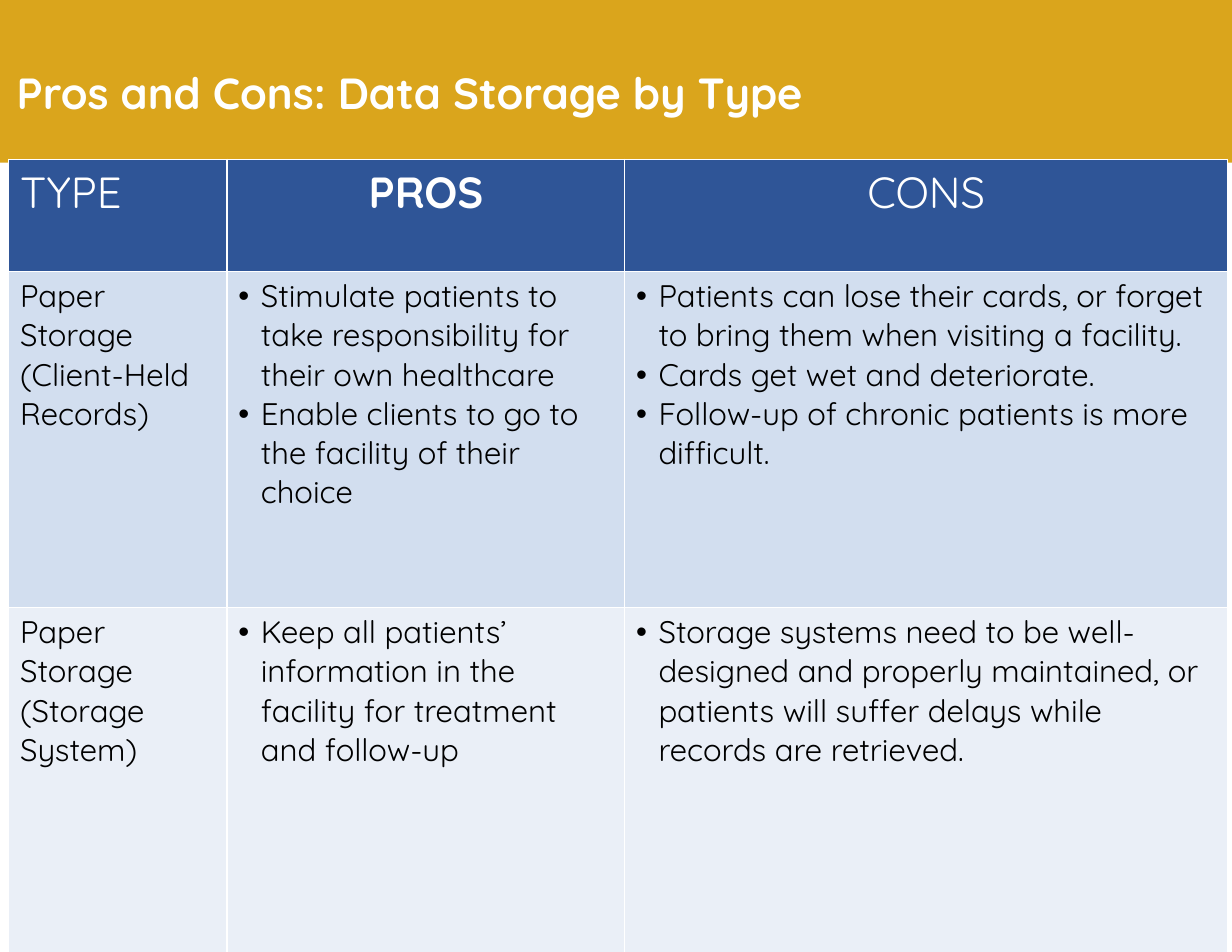
from lxml.etree import SubElement
from pptx import Presentation
from pptx.dml.color import RGBColor
from pptx.enum.shapes import MSO_SHAPE as Shape
from pptx.enum.text import MSO_ANCHOR as Anchor, PP_ALIGN as Align
from pptx.oxml.ns import qn
from pptx.util import Cm, Pt

GOLD = RGBColor(0xDA, 0xA5, 0x1C)
NAVY = RGBColor(0x2F, 0x55, 0x97)
PALE_BLUE = RGBColor(0xD2, 0xDE, 0xEF)
ICE_BLUE = RGBColor(0xEA, 0xEF, 0xF7)
WHITE = RGBColor(0xFF, 0xFF, 0xFF)
BLACK = RGBColor(0x00, 0x00, 0x00)

FONT = "Quicksand"
COLUMN_WIDTHS = (4.95, 9.02, 13.67)
ROW_HEIGHTS = (2.54, 7.62, 8.97)
ROW_FILLS = (NAVY, PALE_BLUE, ICE_BLUE)
HEADINGS = (("TYPE", Align.LEFT, False), ("PROS", Align.CENTER, True), ("CONS", Align.CENTER, False))
STORAGE_TYPES = (
    (
        ("Paper Storage", "(Client-Held Records)"),
        (
            "Stimulate patients to take responsibility for their own healthcare",
            "Enable clients to go to the facility of their choice",
        ),
        (
            "Patients can lose their cards, or forget to bring them when visiting a facility.",
            "Cards get wet and deteriorate.",
            "Follow-up of chronic patients is more difficult.",
        ),
    ),
    (
        ("Paper Storage", "(Storage System)"),
        ("Keep all patients’ information in the facility for treatment and follow-up",),
        (
            "Storage systems need to be well-designed and properly maintained, "
            "or patients will suffer delays while records are retrieved.",
        ),
    ),
)


def set_attributes(target, values):
    """Set each named attribute of the target."""
    for name, value in values.items():
        setattr(target, name, value)


def write_paragraph(paragraph, text, size, color, bold=False):
    """Put one formatted run into a paragraph."""
    run = paragraph.add_run()
    run.text = text
    set_attributes(run.font, {"name": FONT, "size": Pt(size), "bold": bold})
    run.font.color.rgb = color


def add_bullet(paragraph):
    """Give a paragraph a hanging round bullet."""
    properties = paragraph._p.get_or_add_pPr()
    properties.set("marL", str(Cm(0.51)))
    properties.set("indent", str(Cm(-0.51)))
    SubElement(properties, qn("a:buFont"), typeface="Arial")
    SubElement(properties, qn("a:buChar"), char="•")


def format_cell(cell, color):
    """Draw thin white borders around a cell and fill it."""
    properties = cell._tc.get_or_add_tcPr()
    for side in ("a:lnL", "a:lnR", "a:lnT", "a:lnB"):
        line = SubElement(properties, qn(side), w=str(Pt(1)))
        fill = SubElement(line, qn("a:solidFill"))
        SubElement(fill, qn("a:srgbClr"), val=str(WHITE))
    cell.fill.solid()
    cell.fill.fore_color.rgb = color


def add_banner(slide):
    """Add the gold band behind the title."""
    banner = slide.shapes.add_shape(Shape.RECTANGLE, Cm(-0.38), Cm(-0.48), Cm(28.7), Cm(4.17))
    banner.shadow.inherit = False
    banner.fill.solid()
    banner.fill.fore_color.rgb = GOLD
    banner.line.fill.background()


def add_title(slide, text):
    """Add the slide title."""
    title = slide.shapes.add_textbox(Cm(0.13), Cm(1.27), Cm(27.94), Cm(1.8))
    frame = title.text_frame
    set_attributes(frame, {"word_wrap": True, "vertical_anchor": Anchor.MIDDLE})
    paragraph = frame.paragraphs[0]
    paragraph.line_spacing = 0.9
    write_paragraph(paragraph, text, 28, WHITE, True)


def fill_body_cell(cell, lines, bulleted):
    """Write the lines of a body cell, one paragraph each."""
    frame = cell.text_frame
    for index, text in enumerate(lines):
        paragraph = frame.add_paragraph() if index else frame.paragraphs[0]
        write_paragraph(paragraph, text, 20, BLACK)
        if bulleted:
            add_bullet(paragraph)


def add_storage_table(slide):
    """Add the table of pros and cons by storage type."""
    frame = slide.shapes.add_table(
        len(ROW_HEIGHTS), len(COLUMN_WIDTHS), Cm(0.2), Cm(3.61),
        Cm(sum(COLUMN_WIDTHS)), Cm(sum(ROW_HEIGHTS)),
    )
    table = frame.table
    for column, width in zip(table.columns, COLUMN_WIDTHS):
        column.width = Cm(width)
    for row, height, color in zip(table.rows, ROW_HEIGHTS, ROW_FILLS):
        row.height = Cm(height)
        for cell in row.cells:
            format_cell(cell, color)
    for cell, (text, alignment, bold) in zip(table.rows[0].cells, HEADINGS):
        paragraph = cell.text_frame.paragraphs[0]
        paragraph.alignment = alignment
        write_paragraph(paragraph, text, 28, WHITE, bold)
    for row_index, contents in enumerate(STORAGE_TYPES, start=1):
        for column_index, lines in enumerate(contents):
            fill_body_cell(table.cell(row_index, column_index), lines, column_index > 0)


def main():
    """Build and save the slide."""
    presentation = Presentation()
    set_attributes(presentation, {"slide_width": Cm(27.94), "slide_height": Cm(21.59)})
    slide = presentation.slides.add_slide(presentation.slide_layouts[6])
    add_banner(slide)
    add_title(slide, "Pros and Cons: Data Storage by Type")
    add_storage_table(slide)
    presentation.save("out.pptx")


if __name__ == "__main__":
    main()
